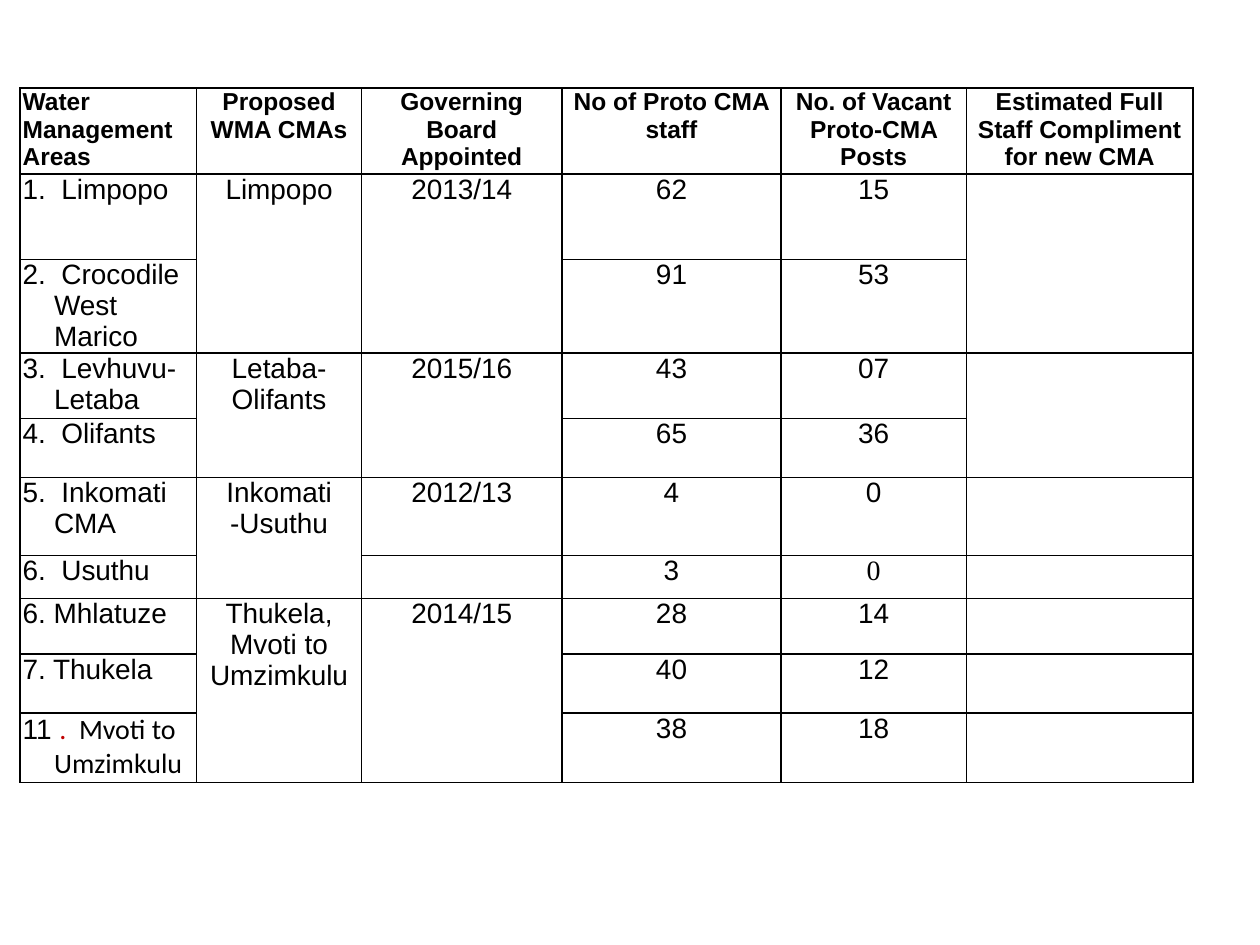
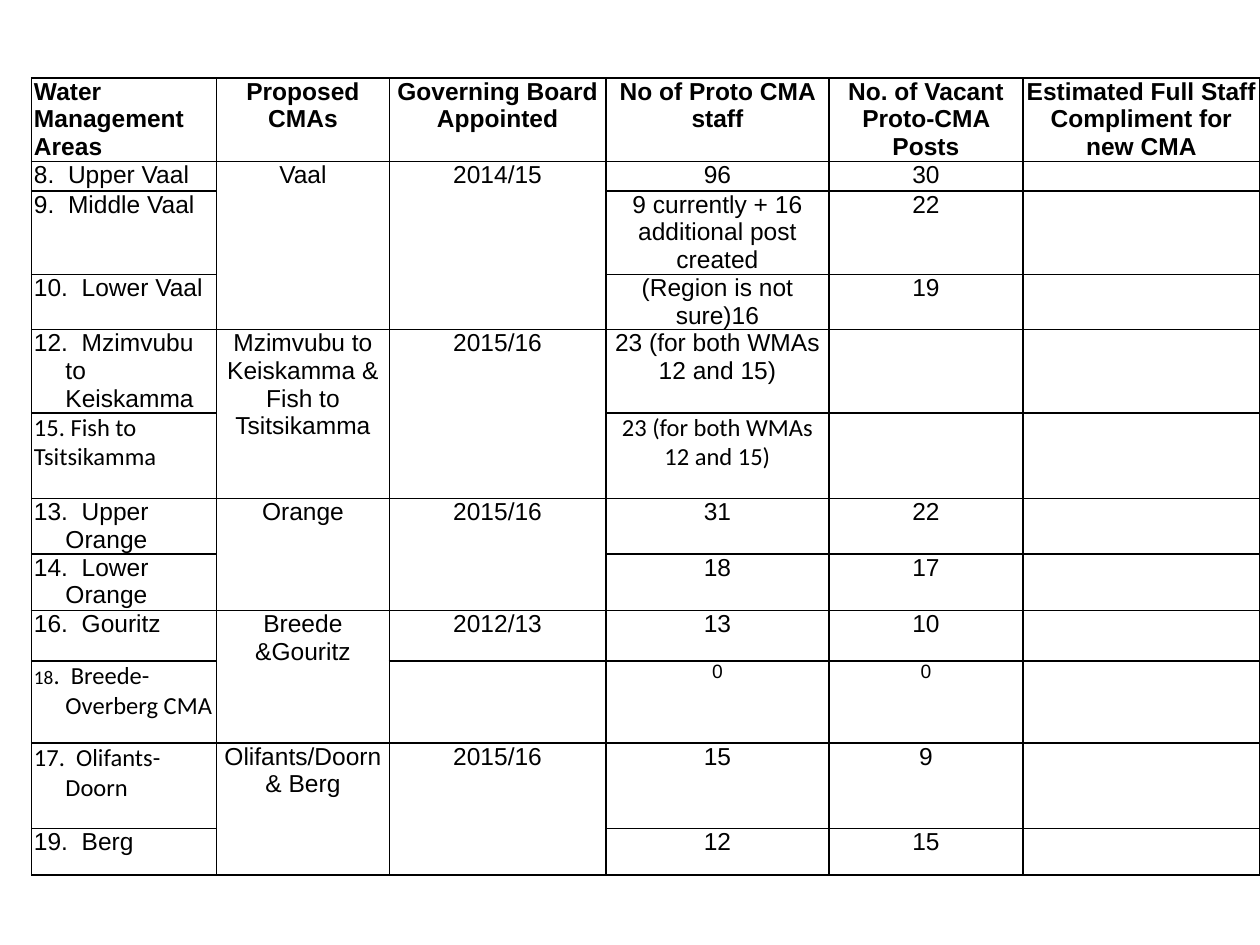
from dataclasses import dataclass

from lxml import etree
from pptx import Presentation
from pptx.dml.color import RGBColor
from pptx.enum.text import MSO_ANCHOR, PP_ALIGN
from pptx.oxml.ns import qn
from pptx.util import Inches, Pt

LEFT, CENTER = PP_ALIGN.LEFT, PP_ALIGN.CENTER
TOP = MSO_ANCHOR.TOP
BLACK = RGBColor(0x00, 0x00, 0x00)
WHITE = RGBColor(0xFF, 0xFF, 0xFF)
DARK_RED = RGBColor(0xC0, 0x00, 0x00)
SANS, HUMANIST, SERIF = "Arial", "Calibri", "Times New Roman"
HEADER_SIZE = 14
HANGING = Inches(0.25)
SIDE_MARGIN = Inches(0.02)
BORDER_WIDTH = Pt(1)
BLANK_LAYOUT = 6
AREA, CMA, BOARD, STAFF, VACANT, ESTIMATE = range(6)


@dataclass(frozen=True)
class Span:
    text: str
    font: str = SANS
    size: float | None = None
    color: RGBColor = BLACK


Content = str | Span | list[Span]


@dataclass(frozen=True)
class WaterArea:
    height: float
    name: Content
    staff: Content
    vacant: Content = ""


@dataclass(frozen=True)
class ProposedCma:
    name: str
    board: str
    areas: list[WaterArea]
    board_shared: bool = True
    estimate_shared: bool = False


@dataclass(frozen=True)
class StaffingTable:
    left: float
    top: float
    widths: list[float]
    header_height: float
    cma_heading: str
    body_size: float
    cmas: list[ProposedCma]


STAFFING_TABLES = [
    StaffingTable(
        0.16, 0.7, [1.4, 1.31, 1.59, 1.74, 1.47, 1.8], 0.68, "Proposed WMA CMAs", 16,
        [
            ProposedCma("Limpopo", "2013/14", [
                WaterArea(0.68, "1.  Limpopo", "62", "15"),
                WaterArea(0.74, "2.  Crocodile West Marico", "91", "53"),
            ], estimate_shared=True),
            ProposedCma("Letaba- Olifants", "2015/16", [
                WaterArea(0.52, "3.  Levhuvu-Letaba", "43", "07"),
                WaterArea(0.47, "4.  Olifants", "65", "36"),
            ], estimate_shared=True),
            ProposedCma("Inkomati -Usuthu", "2012/13", [
                WaterArea(0.62, "5.  Inkomati CMA", "4", "0"),
                WaterArea(0.34, "6.  Usuthu", "3", Span("0", SERIF)),
            ], board_shared=False),
            ProposedCma("Thukela, Mvoti to Umzimkulu", "2014/15", [
                WaterArea(0.44, "6. Mhlatuze", "28", "14"),
                WaterArea(0.47, "7. Thukela", "40", "12"),
                WaterArea(0.55, [
                    Span("11 "),
                    Span(".  ", HUMANIST, color=DARK_RED),
                    Span("Mvoti to Umzimkulu", HUMANIST),
                ], "38", "18"),
            ]),
        ],
    ),
    StaffingTable(
        0.25, 0.62, [1.47, 1.37, 1.72, 1.77, 1.54, 1.88], 0.66, "Proposed CMAs", 14,
        [
            ProposedCma("Vaal", "2014/15", [
                WaterArea(0.21, "8.  Upper Vaal", "96", "30"),
                WaterArea(0.66, "9.  Middle Vaal",
                          "9 currently + 16 additional post created", "22"),
                WaterArea(0.44, "10.  Lower Vaal", "(Region is not sure)16", "19"),
            ]),
            ProposedCma("Mzimvubu to Keiskamma & Fish to Tsitsikamma", "2015/16", [
                WaterArea(0.66, "12.  Mzimvubu to Keiskamma",
                          "23 (for both WMAs 12 and 15)"),
                WaterArea(0.68, Span("15. Fish to\nTsitsikamma", HUMANIST),
                          Span("23 (for both WMAs 12 and 15)", HUMANIST)),
            ]),
            ProposedCma("Orange", "2015/16", [
                WaterArea(0.44, "13.  Upper Orange", "31", "22"),
                WaterArea(0.45, "14.  Lower Orange", "18", "17"),
            ]),
            ProposedCma("Breede &Gouritz", "2012/13", [
                WaterArea(0.4, "16.  Gouritz", "13", "10"),
                WaterArea(0.65, [
                    Span("18", HUMANIST, 11),
                    Span(".  Breede- Overberg CMA", HUMANIST),
                ], Span("0", size=11), Span("0", size=11)),
            ], board_shared=False),
            ProposedCma("Olifants/Doorn & Berg", "2015/16", [
                WaterArea(0.68, Span("17.  Olifants-Doorn", HUMANIST), "15", "9"),
                WaterArea(0.37, "19.  Berg", "12", "15"),
            ]),
        ],
    ),
]


def write_text(cell, content: Content, *, size: float, bold: bool = False,
               align=CENTER, hanging: bool = False) -> None:
    if isinstance(content, str):
        content = Span(content)
    spans = content if isinstance(content, list) else [content]
    frame = cell.text_frame
    paragraph = frame.paragraphs[0]
    for span in spans:
        for index, line in enumerate(span.text.split("\n")):
            if index:
                paragraph = frame.add_paragraph()
            if not line:
                continue
            run = paragraph.add_run()
            run.text = line
            run.font.name = span.font
            run.font.size = Pt(span.size or size)
            run.font.bold = bold
            run.font.color.rgb = span.color
    for paragraph in frame.paragraphs:
        paragraph.alignment = align
        if hanging:
            properties = paragraph._p.get_or_add_pPr()
            properties.set("marL", str(HANGING))
            properties.set("indent", str(-HANGING))
        if not paragraph.runs:
            ending = etree.SubElement(paragraph._p, qn("a:endParaRPr"))
            ending.set("sz", str(size * 100))


def style_cell(cell) -> None:
    cell.margin_left = cell.margin_right = SIDE_MARGIN
    cell.margin_top = cell.margin_bottom = 0
    cell.vertical_anchor = TOP
    properties = cell._tc.get_or_add_tcPr()
    for side in ("lnL", "lnR", "lnT", "lnB"):
        border = etree.SubElement(properties, qn(f"a:{side}"), w=str(BORDER_WIDTH))
        fill = etree.SubElement(border, qn("a:solidFill"))
        etree.SubElement(fill, qn("a:srgbClr"), val=str(BLACK))
    cell.fill.solid()
    cell.fill.fore_color.rgb = WHITE


def add_staffing_table(slide, staffing: StaffingTable) -> None:
    areas = [area for cma in staffing.cmas for area in cma.areas]
    heights = [staffing.header_height] + [area.height for area in areas]
    table = slide.shapes.add_table(
        len(heights), len(staffing.widths), Inches(staffing.left), Inches(staffing.top),
        Inches(sum(staffing.widths)), Inches(sum(heights))).table
    table.first_row = table.horz_banding = False
    for column, width in zip(table.columns, staffing.widths):
        column.width = Inches(width)
    for row, height in zip(table.rows, heights):
        row.height = Inches(height)
    for cell in table.iter_cells():
        style_cell(cell)

    headings = [
        "Water Management Areas", staffing.cma_heading, "Governing Board Appointed",
        "No of Proto CMA staff", "No. of Vacant Proto-CMA Posts",
        "Estimated Full Staff Compliment for new CMA",
    ]
    for column, heading in enumerate(headings):
        write_text(table.cell(0, column), heading, size=HEADER_SIZE, bold=True,
                   align=LEFT if column == AREA else CENTER)

    first = 1
    for cma in staffing.cmas:
        last = first + len(cma.areas) - 1
        for row, area in enumerate(cma.areas, first):
            opens = row == first
            values = [area.name, cma.name if opens else "", cma.board if opens else "",
                      area.staff, area.vacant, ""]
            for column, value in enumerate(values):
                is_area = column == AREA
                write_text(table.cell(row, column), value, size=staffing.body_size,
                           align=LEFT if is_area else CENTER, hanging=is_area)
        shared = {CMA: True, BOARD: cma.board_shared, ESTIMATE: cma.estimate_shared}
        for column, is_shared in shared.items():
            if is_shared:
                table.cell(first, column).merge(table.cell(last, column))
        first = last + 1


def main() -> None:
    deck = Presentation()
    deck.slide_width, deck.slide_height = Inches(10), Inches(7.5)
    for staffing in STAFFING_TABLES:
        slide = deck.slides.add_slide(deck.slide_layouts[BLANK_LAYOUT])
        add_staffing_table(slide, staffing)
    deck.save("out.pptx")


if __name__ == "__main__":
    main()
